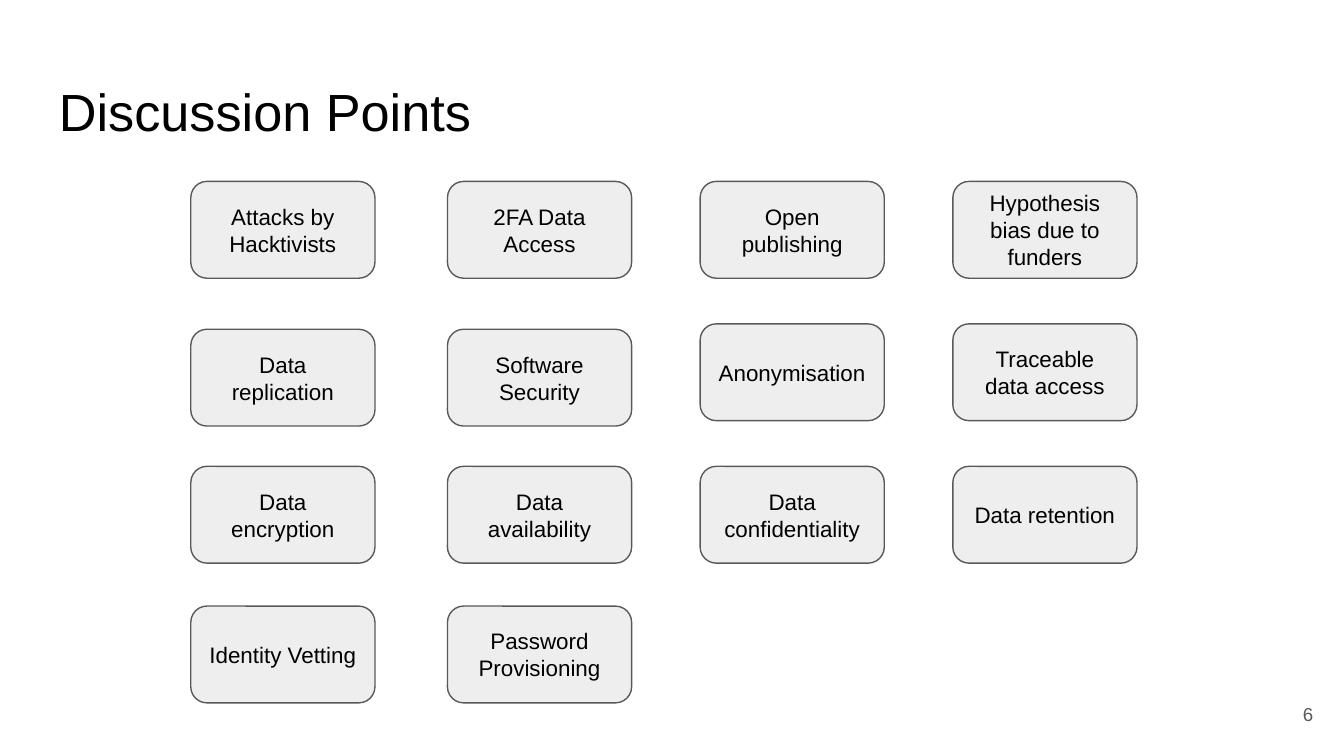
import pptx
import pptx.dml.color
import pptx.enum.shapes
import pptx.enum.text
import pptx.util

Inches = pptx.util.Inches
Pt = pptx.util.Pt
RGBColor = pptx.dml.color.RGBColor
Align = pptx.enum.text.PP_ALIGN
Anchor = pptx.enum.text.MSO_ANCHOR

BLACK = RGBColor(0x00, 0x00, 0x00)
GRAY = RGBColor(0x59, 0x59, 0x59)
LIGHT_GRAY = RGBColor(0xEE, 0xEE, 0xEE)
FONT = "Arial"

CARD_WIDTH, CARD_HEIGHT = 1.37, 0.72
# Each column: left edge, top of its second row, and topics from top to bottom.
COLUMNS = [
    (1.42, 2.45, ["Attacks by Hacktivists", "Data replication",
                  "Data encryption", "Identity Vetting"]),
    (3.33, 2.45, ["2FA Data Access", "Software Security",
                  "Data availability", "Password Provisioning"]),
    (5.21, 2.41, ["Open publishing", "Anonymisation",
                  "Data confidentiality"]),
    (7.09, 2.41, ["Hypothesis bias due to funders",
                  "Traceable data access", "Data retention"]),
]


def write_text(shape, text, size, color, align, anchor):
    frame = shape.text_frame
    frame.text = text
    frame.word_wrap = True
    frame.vertical_anchor = anchor
    frame.margin_left = frame.margin_right = Inches(0.1)
    frame.margin_top = frame.margin_bottom = Inches(0.1)
    paragraph = frame.paragraphs[0]
    paragraph.alignment = align
    font = paragraph.runs[0].font
    font.name = FONT
    font.size = Pt(size)
    font.color.rgb = color


def add_label(slide, left, top, width, height, *text_style):
    box = slide.shapes.add_textbox(
        Inches(left), Inches(top), Inches(width), Inches(height))
    write_text(box, *text_style)


def add_card(slide, left, top, topic):
    card = slide.shapes.add_shape(
        pptx.enum.shapes.MSO_SHAPE.ROUNDED_RECTANGLE,
        Inches(left), Inches(top), Inches(CARD_WIDTH), Inches(CARD_HEIGHT))
    card.shadow.inherit = False
    card.fill.solid()
    card.fill.fore_color.rgb = LIGHT_GRAY
    card.line.color.rgb = GRAY
    card.line.width = Pt(0.75)
    write_text(card, topic, 12, BLACK, Align.CENTER, Anchor.MIDDLE)


def main():
    deck = pptx.Presentation()
    deck.slide_width = Inches(10)
    deck.slide_height = Inches(10) * 9 // 16
    slide = deck.slides.add_slide(deck.slide_layouts[6])

    add_label(slide, 0.34, 0.49, 9.32, 0.63,
              "Discussion Points", 28, BLACK, Align.LEFT, Anchor.TOP)
    add_label(slide, 9.27, 5.1, 0.6, 0.43,
              "6", 10, GRAY, Align.RIGHT, Anchor.MIDDLE)
    for left, second_top, topics in COLUMNS:
        row_tops = [1.35, second_top, 3.47, 4.51]
        for top, topic in zip(row_tops, topics):
            add_card(slide, left, top, topic)

    deck.save("out.pptx")


if __name__ == "__main__":
    main()
